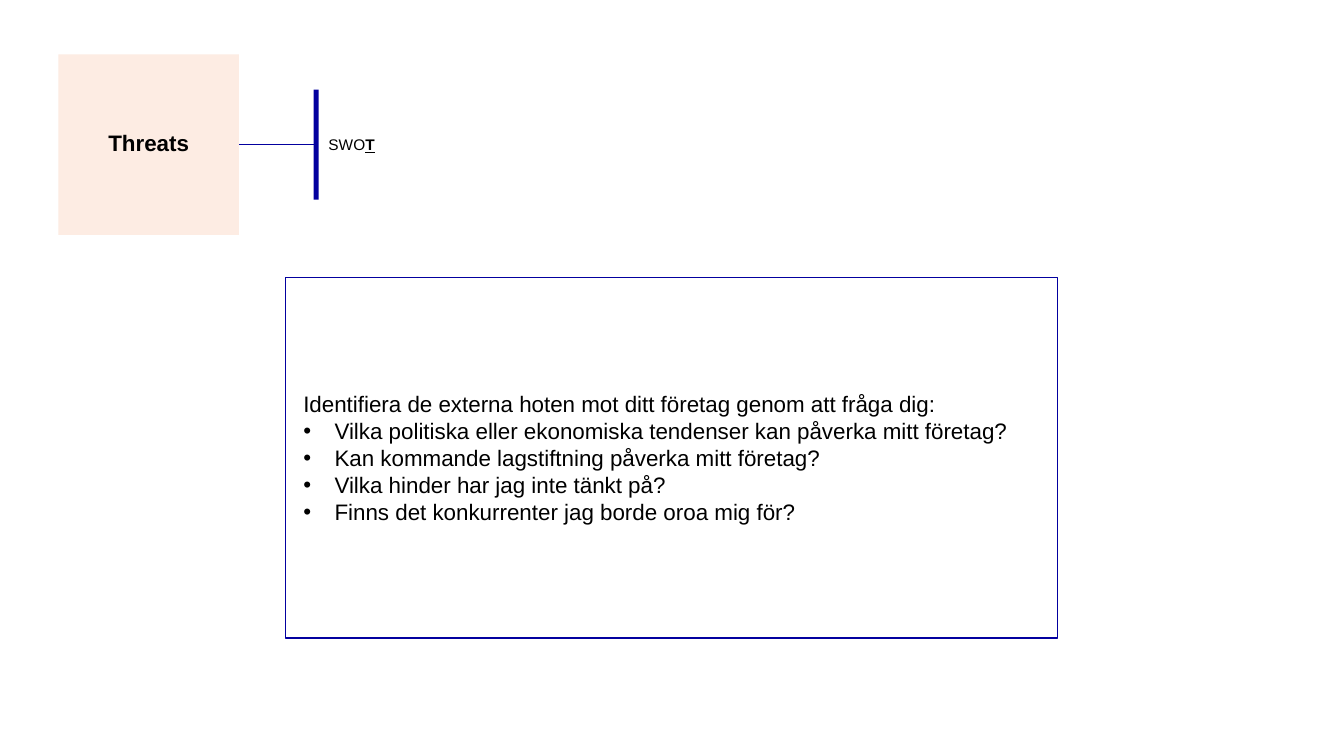
from lxml import etree
from pptx import Presentation
from pptx.dml.color import RGBColor
from pptx.enum.shapes import MSO_CONNECTOR, MSO_SHAPE
from pptx.enum.text import MSO_ANCHOR, MSO_AUTO_SIZE, PP_ALIGN
from pptx.oxml.ns import qn
from pptx.util import Pt

EMU_PER_PX = 9144  # 100 px to the inch
COLORS = {"navy": "03009F", "peach": "FDECE3", "text": "000000"}
FONT = "Arial"
HEADING = "Identifiera de externa hoten mot ditt företag genom att fråga dig:"
QUESTIONS = [
    "Vilka politiska eller ekonomiska tendenser kan påverka mitt företag?",
    "Kan kommande lagstiftning påverka mitt företag?",
    "Vilka hinder har jag inte tänkt på?",
    "Finns det konkurrenter jag borde oroa mig för?",
]


def px(value):
    return value * EMU_PER_PX


def color(name):
    return RGBColor.from_string(COLORS[name])


def set_fill(shape, name):
    shape.fill.solid()
    shape.fill.fore_color.rgb = color(name)


def set_font(font, size, bold=None):
    font.name = FONT
    font.size = Pt(size)
    font.bold = bold
    font.color.rgb = color("text")


def set_indent(paragraph, left, hanging=0, bullet=None):
    properties = paragraph._p.get_or_add_pPr()
    properties.set("marL", str(px(left)))
    properties.set("indent", str(px(-hanging)))
    if bullet:
        etree.SubElement(properties, qn("a:buFont")).set("typeface", FONT)
        etree.SubElement(properties, qn("a:buChar")).set("char", bullet)


def add_rectangle(slide, left, top, width, height):
    shape = slide.shapes.add_shape(
        MSO_SHAPE.RECTANGLE, px(left), px(top), px(width), px(height))
    shape.shadow.inherit = False
    return shape


def place_title(slide, text, left, top, side):
    title = slide.shapes.title
    title.left, title.top = px(left), px(top)
    title.width = title.height = px(side)
    set_fill(title, "peach")
    frame = title.text_frame
    frame.text = text
    frame.word_wrap = True
    frame.auto_size = MSO_AUTO_SIZE.NONE
    frame.vertical_anchor = MSO_ANCHOR.MIDDLE
    frame.margin_left = frame.margin_right = 0
    paragraph = frame.paragraphs[0]
    paragraph.alignment = PP_ALIGN.CENTER
    paragraph.line_spacing = 0.9
    set_font(paragraph.font, 16, bold=True)
    return title


def add_bar(slide, left, top, width, height):
    bar = add_rectangle(slide, left, top, width, height)
    set_fill(bar, "navy")
    bar.line.fill.background()
    return bar


def join_sides(slide, left_shape, right_shape):
    """Draw a line from the left side of one shape to the right side of the other."""
    connector = slide.shapes.add_connector(MSO_CONNECTOR.STRAIGHT, 0, 0, 0, 0)
    connector.begin_connect(right_shape, 1)
    connector.end_connect(left_shape, 3)
    connector.line.color.rgb = color("navy")
    connector.line.width = Pt(1)
    etree.SubElement(connector._element.spPr, qn("a:effectLst"))


def add_swot_label(slide, left, top, width, height):
    box = slide.shapes.add_textbox(px(left), px(top), px(width), px(height))
    box.text_frame.word_wrap = True
    box.text_frame.auto_size = MSO_AUTO_SIZE.SHAPE_TO_FIT_TEXT
    paragraph = box.text_frame.paragraphs[0]
    paragraph.add_run().text = "SWO"
    current_letter = paragraph.add_run()
    current_letter.text = "T"
    for run in paragraph.runs:
        set_font(run.font, 11)
    current_letter.font.bold = True
    current_letter.font.underline = True


def add_question_box(slide, left, top, width, height):
    box = add_rectangle(slide, left, top, width, height)
    box.fill.background()
    box.line.color.rgb = color("navy")
    box.line.width = Pt(1)
    frame = box.text_frame
    frame.word_wrap = True
    frame.vertical_anchor = MSO_ANCHOR.MIDDLE
    frame.text = "\n".join([HEADING, *QUESTIONS])
    heading, *questions = frame.paragraphs
    set_indent(heading, 8)
    for question in questions:
        set_indent(question, 39, hanging=31, bullet="•")
    for paragraph in frame.paragraphs:
        paragraph.alignment = PP_ALIGN.LEFT
        set_font(paragraph.font, 16, bold=paragraph is heading)


def main():
    presentation = Presentation()
    presentation.slide_width, presentation.slide_height = px(1333), px(750)
    slide = presentation.slides.add_slide(presentation.slide_layouts[5])
    add_question_box(slide, 283, 275, 766, 358)
    title = place_title(slide, "Threats", 58, 54, 179)
    bar = add_bar(slide, 311, 89, 5, 109)
    join_sides(slide, title, bar)
    add_swot_label(slide, 316, 129, 186, 29)
    presentation.save("out.pptx")


if __name__ == "__main__":
    main()
